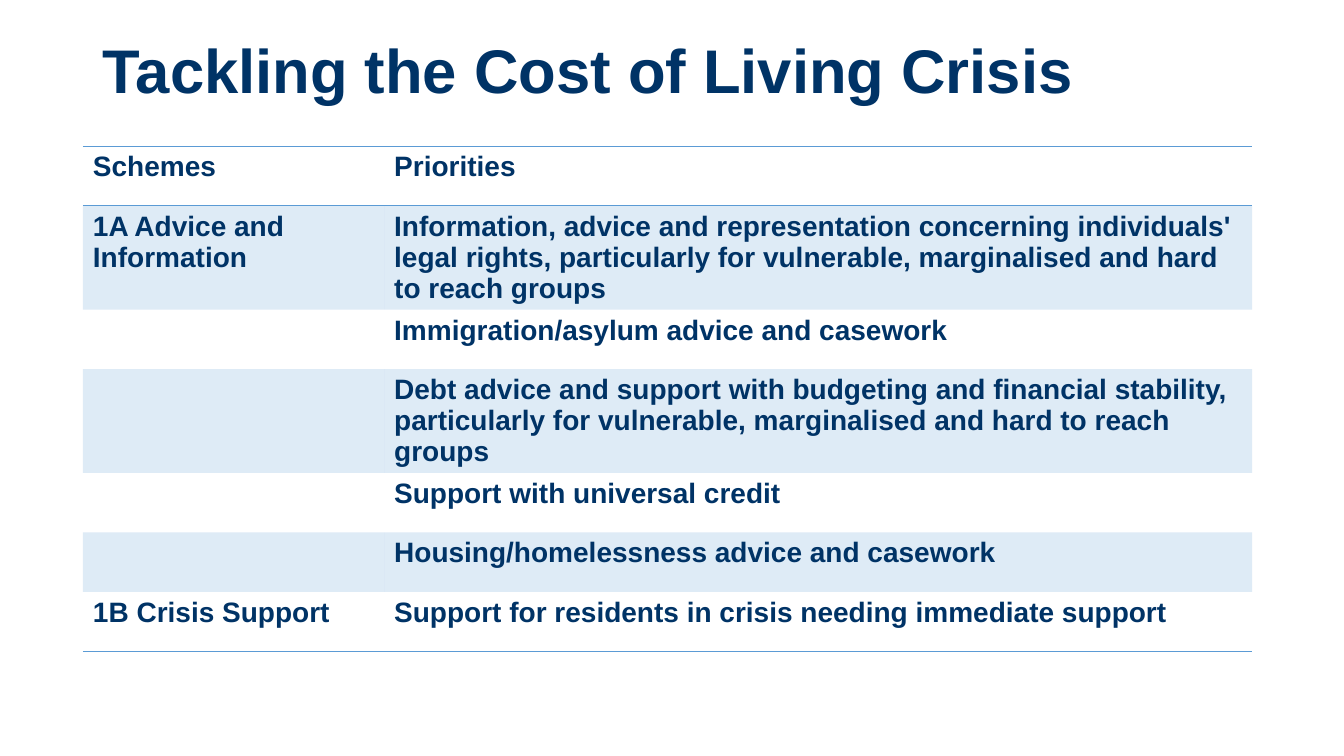
"""Build the slide on schemes and priorities for the cost of living crisis."""
from lxml import etree
from pptx import Presentation
from pptx.dml.color import RGBColor
from pptx.enum.text import MSO_ANCHOR as Anchor, MSO_AUTO_SIZE as Fit, PP_ALIGN as Align
from pptx.oxml.ns import qn
from pptx.util import Pt

TITLE = "Tackling the Cost of Living Crisis"
ROWS = [
    ("Schemes", "Priorities"),
    ("1A Advice and Information",
     "Information, advice and representation concerning individuals' legal rights, "
     "particularly for vulnerable, marginalised and hard to reach groups"),
    ("", "Immigration/asylum advice and casework"),
    ("", "Debt advice and support with budgeting and financial stability, "
         "particularly for vulnerable, marginalised and hard to reach groups"),
    ("", "Support with universal credit"),
    ("", "Housing/homelessness advice and casework"),
    ("1B Crisis Support", "Support for residents in crisis needing immediate support"),
]
WIDTHS = (215.2, 620)
SHORT, TALL = 42.5, 73.6
LONG = 80
LEFT, TOP = 59.2, 104.5

NAVY = RGBColor(0x00, 0x33, 0x66)
BLUE = RGBColor(0x5B, 0x9B, 0xD5)
PLAIN = "{2D5ABB26-0587-4C30-8999-92F81FD0307C}"


def write(frame, text, size=20, color=NAVY, bold=True, name="Arial", gap=None):
    """Put one formatted paragraph into a text frame."""
    para = frame.paragraphs[0]
    para.alignment = Align.LEFT
    para.line_spacing = gap
    if text:
        run = para.add_run()
        run.text = text
        font = run.font
    else:
        font = para.font
    font.size, font.bold, font.name = Pt(size), bold, name
    font.color.rgb = color


def rule(cell, side):
    """Draw a thin blue border on one side of a cell."""
    props = cell._tc.get_or_add_tcPr()
    line = etree.SubElement(props, qn("a:" + side), w=str(Pt(1)))
    fill = etree.SubElement(line, qn("a:solidFill"))
    etree.SubElement(fill, qn("a:srgbClr"), val=str(BLUE))


def tint(cell):
    """Fill a cell with blue at a fifth of full strength."""
    cell.fill.solid()
    cell.fill.fore_color.rgb = BLUE
    color = cell._tc.tcPr.find(".//" + qn("a:solidFill") + "/" + qn("a:srgbClr"))
    etree.SubElement(color, qn("a:alpha"), val="20000")


def main():
    """Make the slide and save it."""
    deck = Presentation()
    deck.slide_width, deck.slide_height = Pt(960), Pt(540)
    slide = deck.slides.add_slide(deck.slide_layouts[5])

    title = slide.shapes.title
    title.left, title.top = Pt(66.2), Pt(0)
    title.width, title.height = Pt(769.7), Pt(104.4)
    frame = title.text_frame
    frame.auto_size = Fit.NONE
    frame.vertical_anchor = Anchor.MIDDLE
    write(frame, TITLE, size=44, gap=0.9)

    highs = [TALL if len(row[1]) > LONG else SHORT for row in ROWS]
    shape = slide.shapes.add_table(len(ROWS), len(WIDTHS), Pt(LEFT), Pt(TOP),
                                   Pt(sum(WIDTHS)), Pt(sum(highs)))
    table = shape.table
    table._tbl.tblPr.find(qn("a:tableStyleId")).text = PLAIN
    for col, width in zip(table.columns, WIDTHS):
        col.width = Pt(width)

    last = len(ROWS) - 1
    for r, (row, high) in enumerate(zip(ROWS, highs)):
        table.rows[r].height = Pt(high)
        for c, text in enumerate(row):
            cell = table.cell(r, c)
            write(cell.text_frame, text)
            if r == 0:
                rule(cell, "lnT")
            if r in (0, last):
                rule(cell, "lnB")
            if r % 2:
                tint(cell)
            else:
                cell.fill.background()
    deck.save("out.pptx")


if __name__ == "__main__":
    main()
